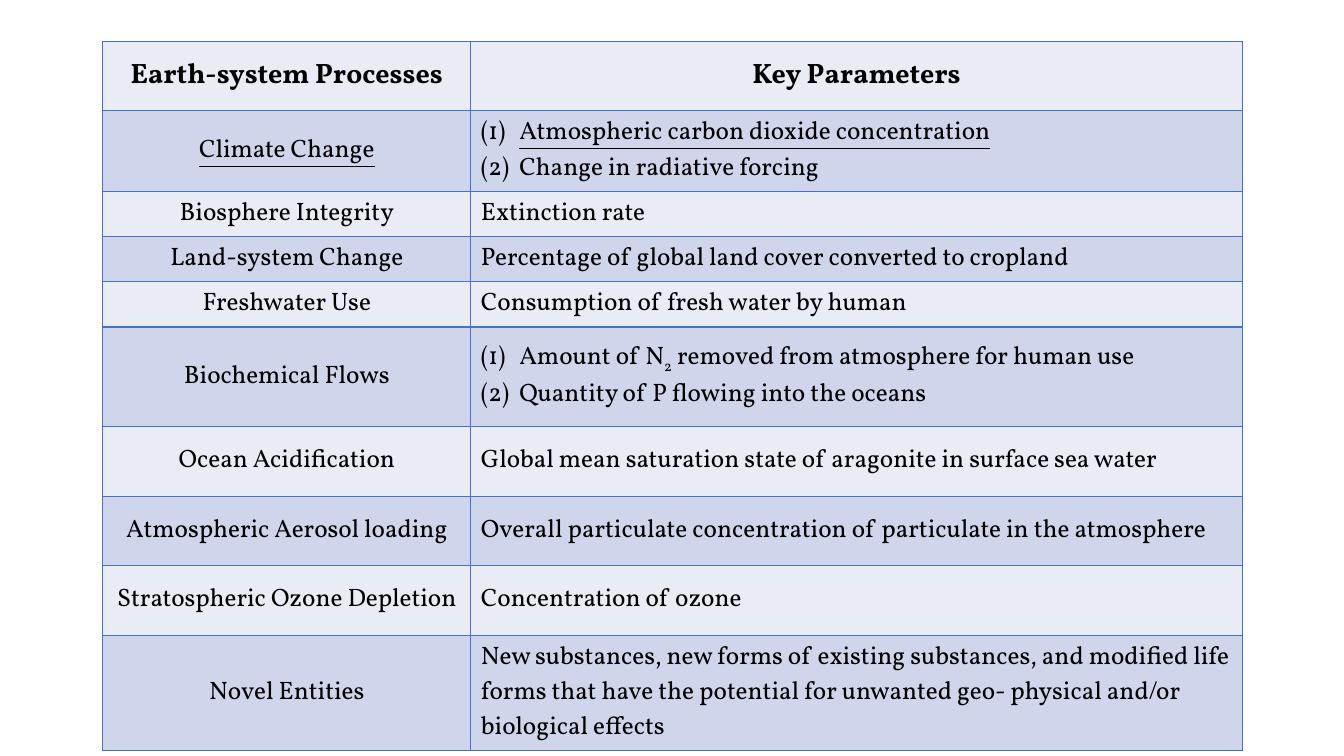
from lxml.etree import SubElement
from pptx import Presentation
from pptx.dml.color import RGBColor
from pptx.enum.text import MSO_ANCHOR, PP_ALIGN
from pptx.oxml.ns import qn
from pptx.util import Inches, Pt

FONT = "Vollkorn"
BLACK = RGBColor(0x00, 0x00, 0x00)
BORDER = RGBColor(0x44, 0x72, 0xC4)
BANDS = (RGBColor(0xE9, 0xEB, 0xF5), RGBColor(0xCF, 0xD5, 0xEA))

SUBSCRIPT = "2"
UNDERLINED = ("Climate Change", "Atmospheric carbon dioxide concentration")
COLUMN_WIDTHS = (3.65, 7.65)

# Row height, process, key parameters (each a list of text runs)
HEADER = (0.69, "Earth-system Processes", [["Key Parameters"]])
PROCESSES = [
    (0.69, "Climate Change", [["Atmospheric carbon dioxide concentration"],
                              ["Change in radiative forcing"]]),
    (0.4, "Biosphere Integrity", [["Extinction rate"]]),
    (0.4, "Land-system Change",
     [["Percentage of global land cover converted to cropland"]]),
    (0.4, "Freshwater Use", [["Consumption of fresh water by human"]]),
    (0.99, "Biochemical Flows",
     [["Amount of N", SUBSCRIPT, " removed from atmosphere for human use"],
      ["Quantity of P flowing into the oceans"]]),
    (0.69, "Ocean Acidification",
     [["Global mean saturation state of aragonite in surface sea water"]]),
    (0.69, "Atmospheric Aerosol loading",
     [["Overall particulate concentration of particulate in the atmosphere"]]),
    (0.69, "Stratospheric Ozone Depletion", [["Concentration of ozone"]]),
    (0.99, "Novel Entities",
     [["New substances, new forms of existing substances, and modified life "
       "forms that have the potential for unwanted geo- physical and/or "
       "biological effects"]]),
]


def add_borders(cell):
    """Draw a 1 pt line on all four sides of a cell."""
    properties = cell._tc.get_or_add_tcPr()
    for side in ("a:lnL", "a:lnR", "a:lnT", "a:lnB"):
        line = SubElement(properties, qn(side), w=str(Pt(1)))
        fill = SubElement(line, qn("a:solidFill"))
        SubElement(fill, qn("a:srgbClr"), val=str(BORDER))


def number_paragraph(paragraph):
    """Give a paragraph a hanging (1), (2) number."""
    properties = paragraph._p.get_or_add_pPr()
    properties.set("marL", str(Inches(0.38)))
    properties.set("indent", str(-Inches(0.38)))
    SubElement(properties, qn("a:buFont"), typeface="+mj-lt")
    SubElement(properties, qn("a:buAutoNum"), type="arabicParenBoth")


def fill_cell(cell, lines, band, centred, header):
    add_borders(cell)
    cell.fill.solid()
    cell.fill.fore_color.rgb = band
    cell.vertical_anchor = MSO_ANCHOR.MIDDLE
    frame = cell.text_frame
    for index, pieces in enumerate(lines):
        paragraph = frame.add_paragraph() if index else frame.paragraphs[0]
        paragraph.alignment = PP_ALIGN.CENTER if centred else PP_ALIGN.LEFT
        if len(lines) > 1:
            number_paragraph(paragraph)
        font = paragraph.font
        font.name = FONT
        font.size = Pt(20 if header else 18)
        font.bold = header
        font.underline = pieces[0] in UNDERLINED
        font.color.rgb = BLACK
        for piece in pieces:
            run = paragraph.add_run()
            run.text = piece
            if piece == SUBSCRIPT:
                run._r.get_or_add_rPr().set("baseline", "-25000")


def add_process_table(slide, left, top, width, height):
    rows = [HEADER] + PROCESSES
    table = slide.shapes.add_table(
        len(rows), len(COLUMN_WIDTHS), Inches(left), Inches(top),
        Inches(width), Inches(height)).table
    table.first_row = table.horz_banding = False
    for column, share in zip(table.columns, COLUMN_WIDTHS):
        column.width = Inches(width * share / sum(COLUMN_WIDTHS))
    for index, (row_height, process, parameters) in enumerate(rows):
        table.rows[index].height = Inches(row_height)
        header = index == 0
        band = BANDS[index % 2]
        fill_cell(table.cell(index, 0), [[process]], band, True, header)
        fill_cell(table.cell(index, 1), parameters, band, header, header)


def main():
    deck = Presentation()
    deck.slide_width, deck.slide_height = Inches(13.33), Inches(7.5)
    slide = deck.slides.add_slide(deck.slide_layouts[6])
    add_process_table(slide, 1.02, 0.41, 11.3, 6.67)
    deck.save("out.pptx")


if __name__ == "__main__":
    main()
